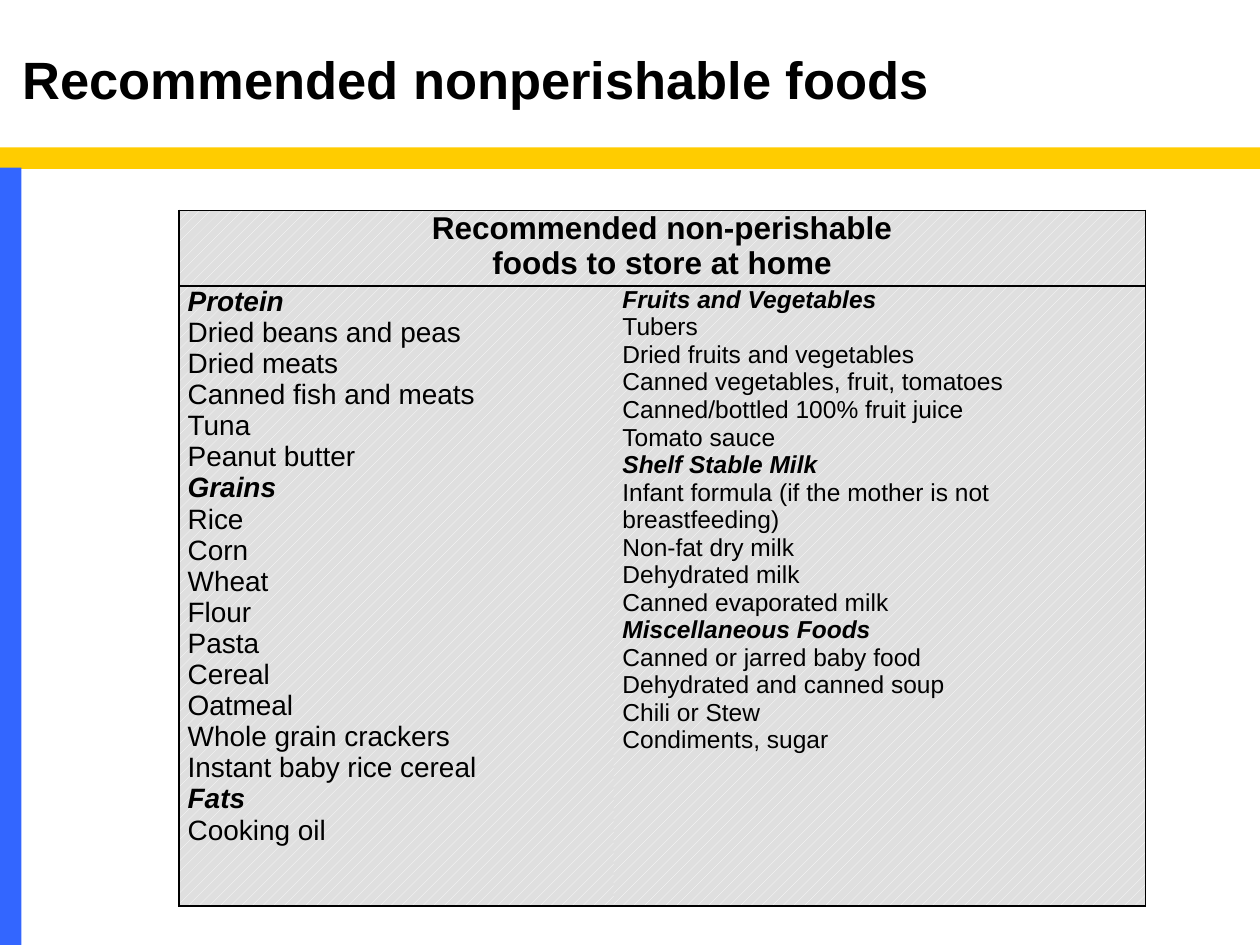
import pptx
import pptx.dml.color
import pptx.enum.dml
import pptx.enum.shapes
import pptx.enum.text
import pptx.oxml
import pptx.oxml.ns
import pptx.util

Inches = pptx.util.Inches
Pt = pptx.util.Pt

FOODS_LEFT = [
    ("Protein", ["Dried beans and peas", "Dried meats", "Canned fish and meats",
                 "Tuna", "Peanut butter"]),
    ("Grains", ["Rice", "Corn", "Wheat", "Flour", "Pasta", "Cereal", "Oatmeal",
                "Whole grain crackers", "Instant baby rice cereal"]),
    ("Fats", ["Cooking oil"]),
]
FOODS_RIGHT = [
    ("Fruits and Vegetables", ["Tubers", "Dried fruits and vegetables",
                               "Canned vegetables, fruit, tomatoes",
                               "Canned/bottled 100% fruit juice", "Tomato sauce"]),
    ("Shelf Stable Milk", ["Infant formula (if the mother is not breastfeeding)",
                           "Non-fat dry milk", "Dehydrated milk",
                           "Canned evaporated milk"]),
    ("Miscellaneous Foods", ["Canned or jarred baby food",
                             "Dehydrated and canned soup", "Chili or Stew",
                             "Condiments, sugar"]),
]


def rgb(value):
    return pptx.dml.color.RGBColor.from_string(value)


def food_lines(groups):
    for heading, foods in groups:
        yield heading, True, True
        for food in foods:
            yield food, False, False


class Deck:
    font = "Arial"
    ink = "000000"
    cell_front = "FFFFFF"
    cell_back = "DFDFDF"

    def __init__(self, prs):
        self.s = prs.slides.add_slide(prs.slide_layouts[6])

    def bar(self, x, y, w, h, color):
        sp = self.s.shapes.add_shape(
            pptx.enum.shapes.MSO_SHAPE.RECTANGLE,
            Inches(x), Inches(y), Inches(w), Inches(h))
        sp.shadow.inherit = False
        sp.fill.solid()
        sp.fill.fore_color.rgb = rgb(color)
        sp.line.fill.background()

    def text(self, tf, lines, size, align=pptx.enum.text.PP_ALIGN.LEFT):
        tf.word_wrap = True
        for i, (content, bold, italic) in enumerate(lines):
            p = tf.add_paragraph() if i else tf.paragraphs[0]
            p.alignment = align
            r = p.add_run()
            r.text = content
            r.font.name = self.font
            r.font.size = Pt(size)
            r.font.bold = bold
            r.font.italic = italic
            r.font.color.rgb = rgb(self.ink)

    def title(self, x, y, w, h, content):
        sp = self.s.shapes.add_textbox(Inches(x), Inches(y), Inches(w), Inches(h))
        sp.text_frame.vertical_anchor = pptx.enum.text.MSO_ANCHOR.BOTTOM
        self.text(sp.text_frame, [(content, True, False)], 30)

    def table(self, x, y, widths, heights):
        table = self.s.shapes.add_table(
            len(heights), len(widths), Inches(x), Inches(y),
            Inches(sum(widths)), Inches(sum(heights))).table
        table.first_row = table.horz_banding = False
        for column, width in zip(table.columns, widths):
            column.width = Inches(width)
        for row, height in zip(table.rows, heights):
            row.height = Inches(height)
        return table

    def cell(self, cell, borders):
        cell.margin_left = cell.margin_right = Inches(0.07)
        cell.margin_top = cell.margin_bottom = 0
        tc_pr = cell._tc.get_or_add_tcPr()
        for side in "LRTB":
            if side in borders:
                paint = f'<a:solidFill><a:srgbClr val="{self.ink}"/></a:solidFill>'
            else:
                paint = "<a:noFill/>"
            tc_pr.append(pptx.oxml.parse_xml(
                f'<a:ln{side} {pptx.oxml.ns.nsdecls("a")} w="{Pt(1)}">{paint}</a:ln{side}>'))
        cell.fill.patterned()
        cell.fill.pattern = pptx.enum.dml.MSO_PATTERN.PERCENT_20
        cell.fill.fore_color.rgb = rgb(self.cell_front)
        cell.fill.back_color.rgb = rgb(self.cell_back)


def main():
    prs = pptx.Presentation()
    prs.slide_width = Inches(10)
    prs.slide_height = Inches(7.5)
    deck = Deck(prs)
    deck.bar(0, 1.17, 10, 0.17, "FFCC00")
    deck.bar(0, 1.33, 0.17, 6.17, "3366FF")
    deck.title(0.08, 0.25, 8.75, 0.67, "Recommended nonperishable foods")

    table = deck.table(1.42, 1.67, [3.45, 4.22], [0.58, 4.92])
    header = table.cell(0, 0)
    header.merge(table.cell(0, 1))
    for col, outer in enumerate("LR"):
        deck.cell(table.cell(0, col), "LRTB")
        deck.cell(table.cell(1, col), outer + "TB")
    heading = ["Recommended non-perishable", "foods to store at home"]
    deck.text(header.text_frame, [(line, True, False) for line in heading], 18,
              pptx.enum.text.PP_ALIGN.CENTER)
    for col, (groups, size) in enumerate([(FOODS_LEFT, 16), (FOODS_RIGHT, 14)]):
        deck.text(table.cell(1, col).text_frame, food_lines(groups), size)
    prs.save("out.pptx")


if __name__ == "__main__":
    main()
